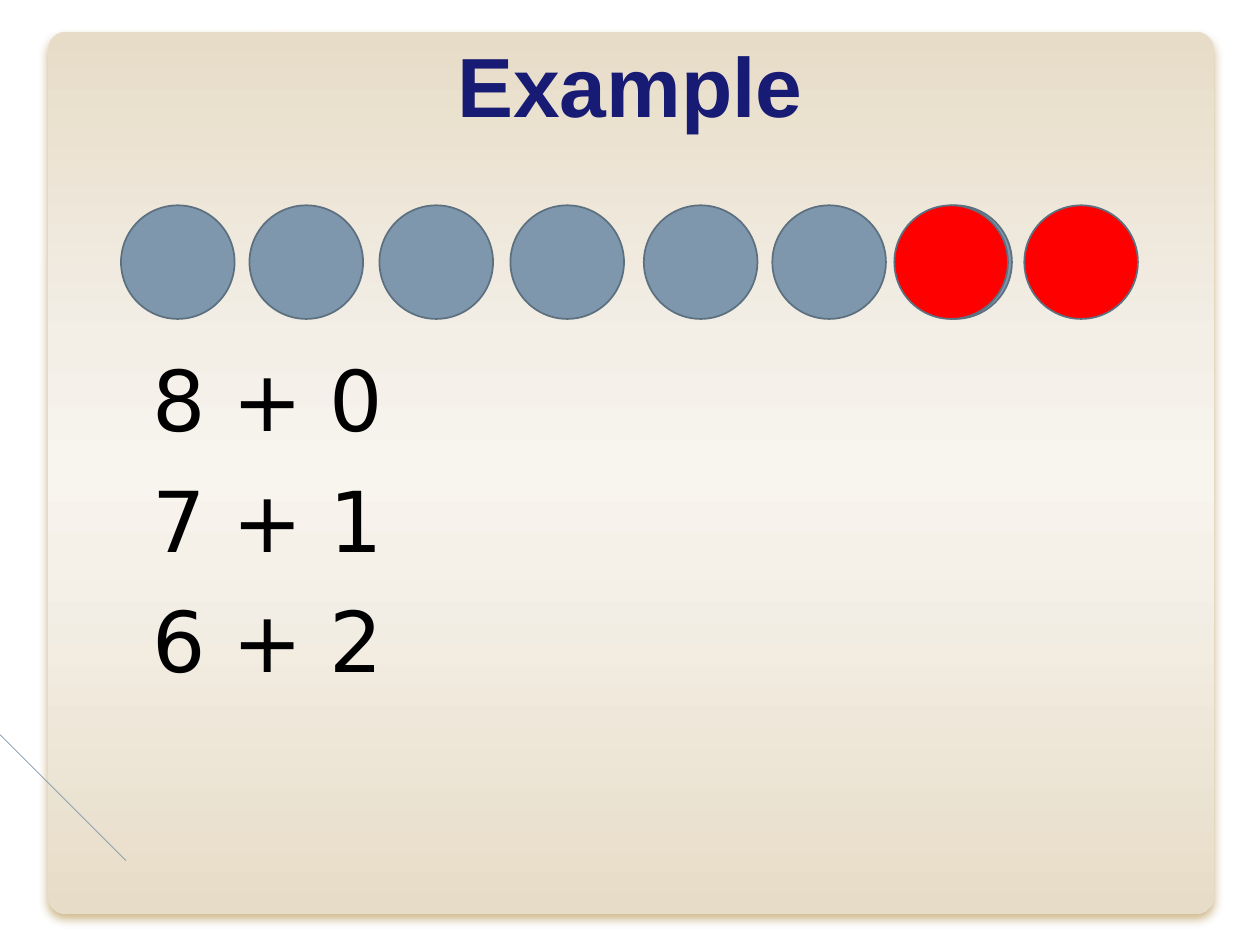
from dataclasses import dataclass

from lxml import etree
from pptx import Presentation
from pptx import util as u
from pptx.dml.color import RGBColor
from pptx.enum import shapes, text
from pptx.oxml import parse_xml
from pptx.oxml.ns import nsdecls, qn

Cm, Pt = u.Cm, u.Pt
BLUE, RED, EDGE = "7E97AD", "FF0000", "5D7080"
STOPS = [(0, "E7DCC7"), (35, "F3EEE6"), (50, "F8F5EF"), (60, "F5F1E9"), (100, "E7DCC7")]


@dataclass
class Disc:
    left: float
    color: str = BLUE
    top: float = 4.14
    size: float = 2.29


DISCS = [Disc(x) for x in (2.44, 5.03, 7.65, 10.29, 12.98, 15.57, 18.11)]
DISCS += [Disc(x, RED) for x in (20.65, 18.03)]


def paint(form, color: str) -> None:
    """Set a solid colour on a fill or a font colour on a font."""
    if hasattr(form, "solid"):
        form.solid()
        form.fore_color.rgb = RGBColor.from_string(color)
    else:
        form.color.rgb = RGBColor.from_string(color)


def add_panel(slide) -> None:
    """Draw the rounded gradient panel with its soft shadow."""
    panel = slide.shapes.add_shape(
        shapes.MSO_SHAPE.ROUNDED_RECTANGLE, Cm(0.97), Cm(0.64), Cm(23.5), Cm(17.78))
    panel.adjustments[0] = 0.02
    panel.line.fill.background()
    stops = "".join(f'<a:gs pos="{pos * 1000}"><a:srgbClr val="{color}"/></a:gs>'
                    for pos, color in STOPS)
    props = panel._element.spPr
    props.find(qn("a:prstGeom")).addnext(parse_xml(
        f'<a:gradFill {nsdecls("a")} rotWithShape="1"><a:gsLst>{stops}</a:gsLst>'
        '<a:lin ang="5400000" scaled="0"/></a:gradFill>'))
    props.append(parse_xml(
        f'<a:effectLst {nsdecls("a")}><a:outerShdw blurRad="{Pt(5)}" dist="{Pt(3.6)}" '
        'dir="5400000" algn="ctr" rotWithShape="0"><a:srgbClr val="956400">'
        '<a:alpha val="45000"/></a:srgbClr></a:outerShdw></a:effectLst>'))


def add_disc(slide, disc: Disc) -> None:
    oval = slide.shapes.add_shape(
        shapes.MSO_SHAPE.OVAL, Cm(disc.left), Cm(disc.top), Cm(disc.size), Cm(disc.size))
    oval.shadow.inherit = False
    paint(oval.fill, disc.color)
    paint(oval.line.fill, EDGE)
    oval.line.width = Pt(1)


def add_text(slide, lines: list[str], box: tuple, *, font: str, color: str,
             size: float = 48, bold: bool = False, align=text.PP_ALIGN.LEFT,
             anchor=text.MSO_ANCHOR.TOP, inset: float = 0.13,
             indent: float = 0, before: float = 0) -> None:
    frame = slide.shapes.add_textbox(*map(Cm, box)).text_frame
    frame.word_wrap = True
    frame.vertical_anchor = anchor
    frame.margin_left = frame.margin_right = Cm(inset)
    frame.margin_top = frame.margin_bottom = Cm(inset)
    for i, line in enumerate(lines):
        para = frame.paragraphs[0] if i == 0 else frame.add_paragraph()
        para.alignment = align
        para.space_before = Pt(before)
        para._p.get_or_add_pPr().set("marL", str(Cm(indent)))
        run = para.add_run()
        run.text = line
        run.font.name, run.font.size, run.font.bold = font, Pt(size), bold
        paint(run.font, color)


def add_line(slide, start: tuple, end: tuple) -> None:
    line = slide.shapes.add_connector(
        shapes.MSO_CONNECTOR.STRAIGHT, *map(Cm, start + end))
    paint(line.line.fill, BLUE)
    line.line.width = Pt(0.39)
    etree.SubElement(line._element.spPr, qn("a:effectLst"))


def main() -> None:
    deck = Presentation()
    deck.slide_width, deck.slide_height = Cm(25.4), Cm(19.05)
    slide = deck.slides.add_slide(deck.slide_layouts[6])
    add_panel(slide)
    add_text(slide, ["Example"], (1.27, 0.1, 22.86, 3.18), font="Arial",
             color="171B73", bold=True, align=text.PP_ALIGN.CENTER,
             anchor=text.MSO_ANCHOR.MIDDLE)
    add_text(slide, ["8 + 0", "7 + 1", "6 + 2"], (2.44, 6.88, 11.43, 12.17),
             font="DejaVu Sans", color="000000", indent=0.51, before=11.2)
    add_line(slide, (0, 14.81), (2.54, 17.35))
    for disc in DISCS:
        add_disc(slide, disc)
    deck.save("out.pptx")


if __name__ == "__main__":
    main()
